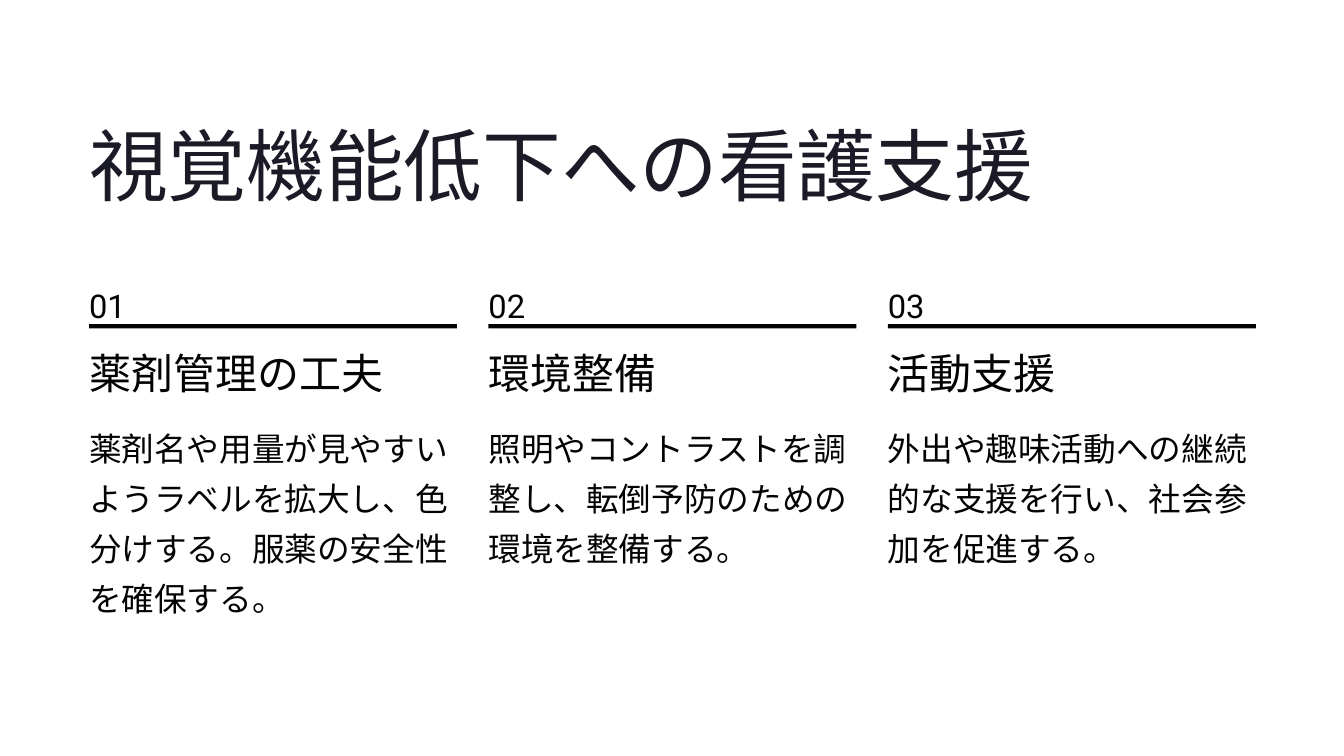
import pptx
import pptx.dml.color
import pptx.enum.shapes
import pptx.enum.text
import pptx.util
from pptx.util import Inches

COLORS = {"title": "1B1B27", "ink": "030303"}

LEFT, COL_WIDTH, COL_STEP = 1.06, 4.38, 4.755

COLUMNS = [
    ("薬剤管理の工夫", "薬剤名や用量が見やすいようラベルを拡大し、色分けする。服薬の安全性を確保する。", 2.41),
    ("環境整備", "照明やコントラストを調整し、転倒予防のための環境を整備する。", 1.81),
    ("活動支援", "外出や趣味活動への継続的な支援を行い、社会参加を促進する。", 1.81),
]


class Deck:
    """Holds the presentation, its style and the current slide."""

    def __init__(self):
        self.prs = pptx.Presentation()
        self.prs.slide_width, self.prs.slide_height = Inches(16), Inches(9)
        self.slide = self.prs.slides.add_slide(self.prs.slide_layouts[5])

    def color(self, name):
        return pptx.dml.color.RGBColor.from_string(COLORS[name])

    def set_text(self, sp, text, font, size, leading, color="ink", wrap=False):
        tf = sp.text_frame
        tf.margin_left = tf.margin_top = tf.margin_right = tf.margin_bottom = 0
        tf.word_wrap = wrap
        tf.auto_size = pptx.enum.text.MSO_AUTO_SIZE.NONE
        tf.vertical_anchor = pptx.enum.text.MSO_ANCHOR.TOP
        p = tf.paragraphs[0]
        p.text = text
        p.alignment = pptx.enum.text.PP_ALIGN.LEFT
        p.line_spacing = pptx.util.Pt(leading)
        p.font.name = font
        p.font.size = pptx.util.Pt(size)
        p.font.color.rgb = self.color(color)

    def title(self, text, x, y, w, h):
        sp = self.slide.shapes.title
        sp.left, sp.top, sp.width, sp.height = map(Inches, (x, y, w, h))
        self.set_text(sp, text, "Inter", 67.5, 84.5, "title")

    def text(self, text, x, y, w, h, font, size, leading, wrap=False):
        sp = self.slide.shapes.add_textbox(*map(Inches, (x, y, w, h)))
        self.set_text(sp, text, font, size, leading, wrap=wrap)

    def bar(self, x, y, w, h):
        sp = self.slide.shapes.add_shape(
            pptx.enum.shapes.MSO_SHAPE.RECTANGLE, *map(Inches, (x, y, w, h)))
        sp.shadow.inherit = False
        sp.fill.solid()
        sp.fill.fore_color.rgb = self.color("ink")
        sp.line.fill.background()


def main():
    deck = Deck()
    deck.title("視覚機能低下への看護支援", LEFT, 1.34, 11.32, 1.18)

    # Three numbered columns
    for i, (heading, body, body_height) in enumerate(COLUMNS):
        x = LEFT + i * COL_STEP
        deck.text(f"{i + 1:02}", x, 3.27, 0.38, 0.47, "Roboto", 28, 43)
        deck.bar(x, 3.86, COL_WIDTH, 0.05)
        deck.text(heading, x, 4.15, COL_WIDTH, 0.59, "Inter", 36, 42)
        deck.text(body, x, 4.97, COL_WIDTH, body_height, "Lato", 28, 43, wrap=True)

    deck.prs.save("out.pptx")


if __name__ == "__main__":
    main()
